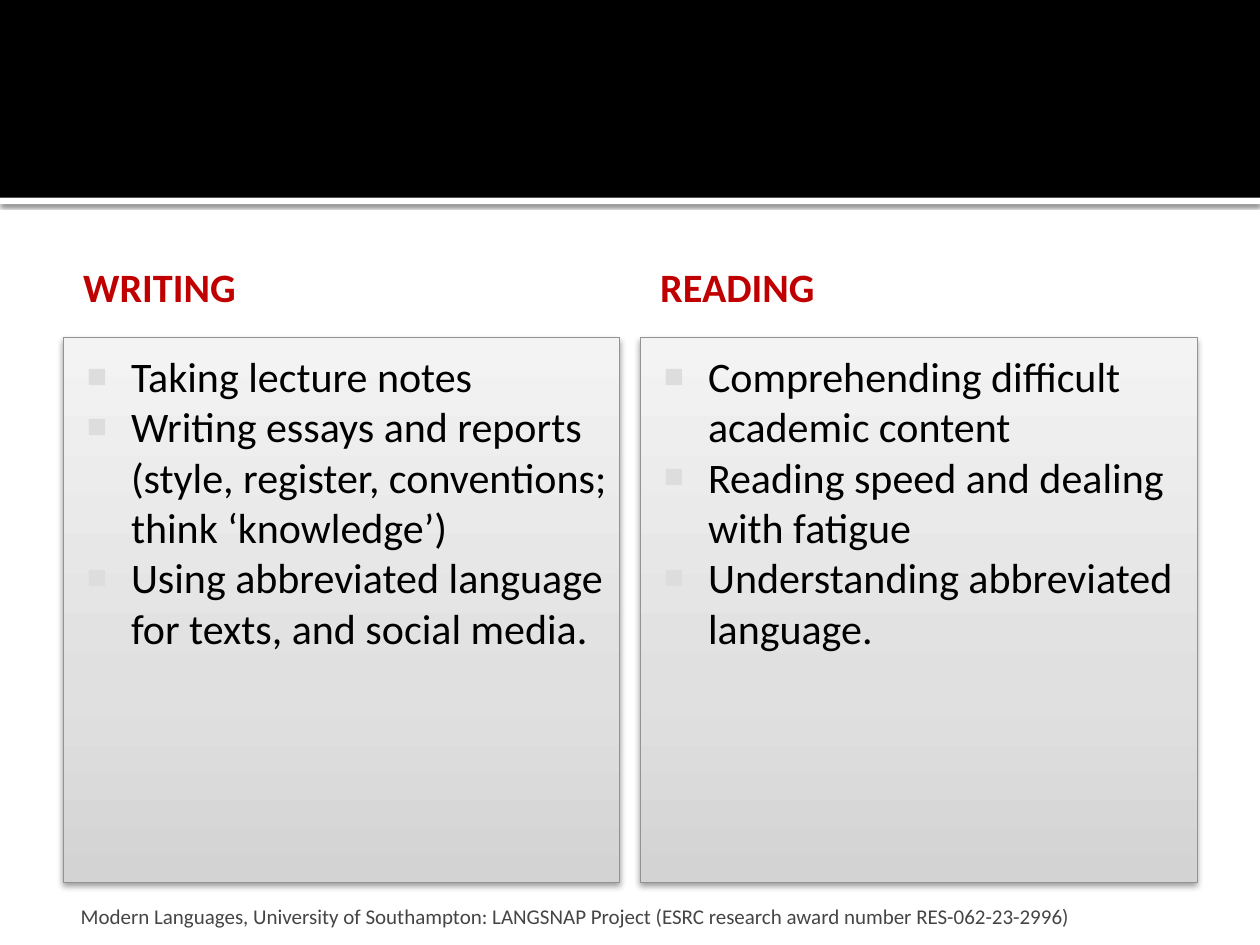
import pptx
import pptx.dml.color
import pptx.enum.shapes
import pptx.enum.text
import pptx.oxml
import pptx.oxml.ns
import pptx.util
from pptx.util import Inches

FONT = "Calibri"
COLUMNS = [
    ("WRITING", [
        "Taking lecture notes",
        "Writing essays and reports (style, register, conventions; think ‘knowledge’)",
        "Using abbreviated language for texts, and social media.",
    ]),
    ("READING", [
        "Comprehending difficult academic content",
        "Reading speed and dealing with fatigue",
        "Understanding abbreviated language.",
    ]),
]
FOOTER = ("Modern Languages, University of Southampton: LANGSNAP Project "
          "(ESRC research award number RES-062-23-2996)")
PANEL_STOPS = [(0, "D3D3D3"), (35, "E0E0E0"), (100, "F3F3F3")]


def color(value):
    return pptx.dml.color.RGBColor.from_string(value)


def drawing_xml(markup):
    """Parse one element whose tag has the a: prefix."""
    tag, rest = markup[1:].split(" ", 1)
    return pptx.oxml.parse_xml(f"<{tag} {pptx.oxml.ns.nsdecls('a')} {rest}")


def add_box(slide, box, fill=None):
    shape = slide.shapes.add_shape(
        pptx.enum.shapes.MSO_SHAPE.RECTANGLE, *map(Inches, box))
    shape.shadow.inherit = False
    shape.line.fill.background()
    if fill:
        shape.fill.solid()
        shape.fill.fore_color.rgb = color(fill)
    return shape


def add_shadow(shape, alpha, blur, distance):
    effects = shape._element.spPr.find(pptx.oxml.ns.qn("a:effectLst"))
    effects.append(drawing_xml(
        f'<a:outerShdw blurRad="{pptx.util.Pt(blur)}" dist="{pptx.util.Pt(distance)}" '
        f'dir="5400000" rotWithShape="0"><a:srgbClr val="000000">'
        f'<a:alpha val="{alpha * 1000}"/></a:srgbClr></a:outerShdw>'))


def set_gradient(shape, stops):
    """Fill the shape from bottom to top."""
    marks = "".join(f'<a:gs pos="{position * 1000}"><a:srgbClr val="{value}"/></a:gs>'
                    for position, value in stops)
    shape._element.spPr.find(pptx.oxml.ns.qn("a:prstGeom")).addnext(drawing_xml(
        f'<a:gradFill rotWithShape="1"><a:gsLst>{marks}</a:gsLst>'
        '<a:lin ang="16200000" scaled="1"/></a:gradFill>'))


def write_text(shape, texts, margins, anchor, size, text_color, bold=False):
    """Write one paragraph per text; margins are left, top, right, bottom."""
    frame = shape.text_frame
    frame.word_wrap = True
    frame.vertical_anchor = anchor
    for side, margin in zip(("left", "top", "right", "bottom"), margins):
        setattr(frame, f"margin_{side}", Inches(margin))
    font_format = {"name": FONT, "size": pptx.util.Pt(size), "bold": bold}
    for index, text in enumerate(texts):
        paragraph = frame.add_paragraph() if index else frame.paragraphs[0]
        paragraph.alignment = pptx.enum.text.PP_ALIGN.LEFT
        run = paragraph.add_run()
        run.text = text
        for name, value in font_format.items():
            setattr(run.font, name, value)
        run.font.color.rgb = color(text_color)


def add_bullets(shape):
    for paragraph in shape.text_frame.paragraphs:
        properties = paragraph._p.get_or_add_pPr()
        properties.set("marL", str(Inches(0.48)))
        properties.set("indent", str(Inches(-0.35)))
        for markup in ('<a:buClr ><a:srgbClr val="DDDDDD"/></a:buClr>',
                       '<a:buSzPct val="80000"/>',
                       '<a:buFont typeface="Arial"/>',
                       '<a:buChar char="■"/>'):
            properties.append(drawing_xml(markup))


def add_banner(slide, left, top, width, height):
    rule_height = 0.05
    rule = add_box(slide, (left, top + height, width, rule_height), "FFFFFF")
    add_shadow(rule, 60, 2.5, 0.8)
    add_box(slide, (left, top, width, height), "000000")


def add_column(slide, left, top, width, height, heading, items):
    heading_height, panel_offset = 0.78, 0.82
    heading_box = slide.shapes.add_textbox(
        *map(Inches, (left, top, width, heading_height)))
    write_text(heading_box, [heading], (0.16, 0.1, 0.1, 0.05),
               pptx.enum.text.MSO_ANCHOR.MIDDLE, 23, "C00000", bold=True)

    panel = add_box(slide, (left, top + panel_offset, width, height - panel_offset))
    set_gradient(panel, PANEL_STOPS)
    panel.line.color.rgb = color("939393")
    panel.line.width = pptx.util.Pt(0.5)
    add_shadow(panel, 38, 3.5, 2)
    write_text(panel, items, (0.06, 0.1, 0.1, 0.05),
               pptx.enum.text.MSO_ANCHOR.TOP, 24, "000000")
    add_bullets(panel)


def add_footer(slide, left, top, width, height):
    footer = slide.shapes.add_textbox(*map(Inches, (left, top, width, height)))
    write_text(footer, [FOOTER], (0.05, 0.05, 0.05, 0),
               pptx.enum.text.MSO_ANCHOR.BOTTOM, 12, "454545")


def main():
    presentation = pptx.Presentation()
    presentation.slide_width = Inches(10)
    presentation.slide_height = Inches(7.5)
    slide = presentation.slides.add_slide(presentation.slide_layouts[6])

    add_banner(slide, 0, 0, 10, 1.57)
    margin, column_width, gap = 0.5, 4.42, 0.16
    for index, (heading, items) in enumerate(COLUMNS):
        left = margin + index * (column_width + gap)
        add_column(slide, left, 1.86, column_width, 5.14, heading, items)
    add_footer(slide, 0.59, 7.08, 8.32, 0.29)
    presentation.save("out.pptx")


if __name__ == "__main__":
    main()
